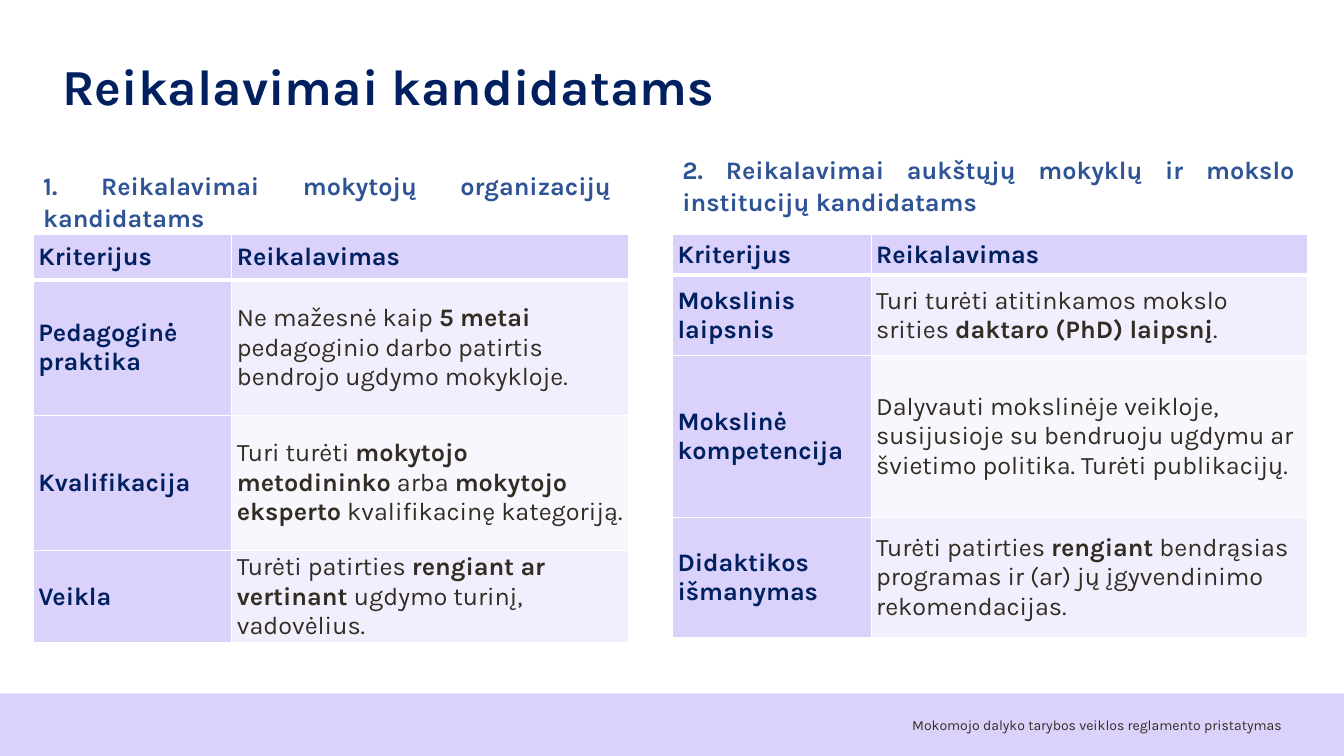
from lxml import etree
from pptx import Presentation
from pptx.dml.color import RGBColor
from pptx.enum.shapes import MSO_SHAPE
from pptx.enum.text import MSO_ANCHOR, PP_ALIGN
from pptx.oxml.ns import qn
from pptx.util import Inches, Pt

RECT = MSO_SHAPE.RECTANGLE
TOP, MIDDLE = MSO_ANCHOR.TOP, MSO_ANCHOR.MIDDLE
LEFT, RIGHT, JUSTIFY = PP_ALIGN.LEFT, PP_ALIGN.RIGHT, PP_ALIGN.JUSTIFY
FONT = "Karla"
COLORS = {
    "navy": "002060", "blue": "2F5496", "ink": "322C23", "white": "FFFFFF",
    "lilac": "DAD2FB", "odd": "F1EEFD", "even": "F8F7FE",
}
HEAD = ("Kriterijus", ["Reikalavimas"])
SCHOOL = [
    ("Pedagoginė praktika",
     ["Ne mažesnė kaip ", "5 metai",
      " pedagoginio darbo patirtis bendrojo ugdymo mokykloje."]),
    ("Kvalifikacija",
     ["Turi turėti ", "mokytojo metodininko", " arba ", "mokytojo eksperto",
      " kvalifikacinę kategoriją."]),
    ("Veikla",
     ["Turėti patirties ", "rengiant ar vertinant ",
      "ugdymo turinį, vadovėlius."]),
]
SCIENCE = [
    ("Mokslinis laipsnis",
     ["Turi turėti atitinkamos mokslo srities ", "daktaro (PhD) laipsnį", "."]),
    ("Mokslinė kompetencija",
     ["Dalyvauti mokslinėje veikloje, susijusioje su bendruoju ugdymu ar "
      "švietimo politika. Turėti publikacijų."]),
    ("Didaktikos išmanymas",
     ["Turėti patirties ", "rengiant",
      " bendrąsias programas ir (ar) jų įgyvendinimo rekomendacijas."]),
]


def rgb(name):
    """Return the named colour."""
    return RGBColor.from_string(COLORS[name])


def add_run(para, text, size, color, bold):
    """Add one styled run to a paragraph."""
    run = para.add_run()
    run.text = text
    run.font.name = FONT
    run.font.size = Pt(size)
    run.font.bold = bold
    run.font.color.rgb = rgb(color)


def add_label(slide, box, text, size, color, bold=False, align=LEFT,
              anchor=MIDDLE, pads=(0, 0), lines=1.0):
    """Place a one-paragraph text box."""
    frame = slide.shapes.add_textbox(*map(Inches, box)).text_frame
    frame.word_wrap = True
    frame.vertical_anchor = anchor
    frame.margin_left = frame.margin_right = Inches(pads[0])
    frame.margin_top = frame.margin_bottom = Inches(pads[1])
    para = frame.paragraphs[0]
    para.alignment = align
    para.line_spacing = lines
    add_run(para, text, size, color, bold)


def add_edges(cell, row):
    """Draw white cell borders, with a thick rule under the header."""
    widths = {"L": 1, "R": 1, "T": 3 if row == 1 else 1, "B": 1 if row else 3}
    props = cell._tc.get_or_add_tcPr()
    for side, width in widths.items():
        line = etree.SubElement(props, qn(f"a:ln{side}"), w=str(Pt(width)))
        fill = etree.SubElement(line, qn("a:solidFill"))
        etree.SubElement(fill, qn("a:srgbClr"), val=COLORS["white"])


def fill_cell(cell, row, parts, label):
    """Style a cell and write its runs, every second one bold."""
    add_edges(cell, row)
    shade = "lilac" if label else "odd" if row % 2 else "even"
    cell.fill.solid()
    cell.fill.fore_color.rgb = rgb(shade)
    cell.vertical_anchor = MIDDLE
    cell.margin_left = Inches(0.05)
    cell.margin_right = cell.margin_top = cell.margin_bottom = Inches(0.01)
    para = cell.text_frame.paragraphs[0]
    para.space_after = Pt(3)
    for i, part in enumerate(parts):
        add_run(para, part, 18, "navy" if label else "ink",
                label or i % 2 == 1)


def add_grid(slide, box, heights, rows):
    """Place a table of criteria in the box."""
    rows = [HEAD] + rows
    table = slide.shapes.add_table(len(rows), 2, *map(Inches, box)).table
    first = 1.97
    for col, width in zip(table.columns, (first, box[2] - first)):
        col.width = Inches(width)
    for r, (name, parts) in enumerate(rows):
        table.rows[r].height = Inches(heights[r])
        fill_cell(table.cell(r, 0), r, [name], True)
        fill_cell(table.cell(r, 1), r, parts, r == 0)


def add_panel(slide, box, inner, title, heights, rows):
    """Place a heading, inner wide, above a table that ends the box."""
    left, top, width, height = box
    add_label(slide, (left, top, inner, 0.7), title, 18, "blue", True,
              JUSTIFY, TOP, (0.1, 0.05), 1.07)
    tall = sum(heights)
    add_grid(slide, (left, top + height - tall, width, tall), heights, rows)


def add_footer(slide, box):
    """Place the bottom band and its caption."""
    left, top, width, height = box
    band = slide.shapes.add_shape(RECT, *map(Inches, box))
    band.shadow.inherit = False
    band.fill.solid()
    band.fill.fore_color.rgb = rgb("lilac")
    band.line.fill.background()
    add_label(slide, (left + width - 5.12, top + 0.14, 4.5, 0.35),
              "Mokomojo dalyko tarybos veiklos reglamento pristatymas",
              10, "ink", align=RIGHT)


def main():
    """Build and save the slide."""
    deck = Presentation()
    deck.slide_width, deck.slide_height = Inches(13.33), Inches(7.5)
    slide = deck.slides.add_slide(deck.slide_layouts[6])
    add_footer(slide, (0, 6.88, 13.33, 0.62))
    add_label(slide, (0.62, 0.46, 12.08, 0.86), "Reikalavimai kandidatams",
              36, "navy", True, lines=0.9)
    add_panel(slide, (0.33, 1.62, 5.91, 4.73), 5.83,
              "1. Reikalavimai mokytojų organizacijų kandidatams",
              (0.45, 1.34, 1.34, 0.89), SCHOOL)
    add_panel(slide, (6.67, 1.46, 6.3, 4.87), 6.27,
              "2. Reikalavimai aukštųjų mokyklų ir mokslo institucijų "
              "kandidatams",
              (0.4, 0.8, 1.6, 1.2), SCIENCE)
    deck.save("out.pptx")


if __name__ == "__main__":
    main()
